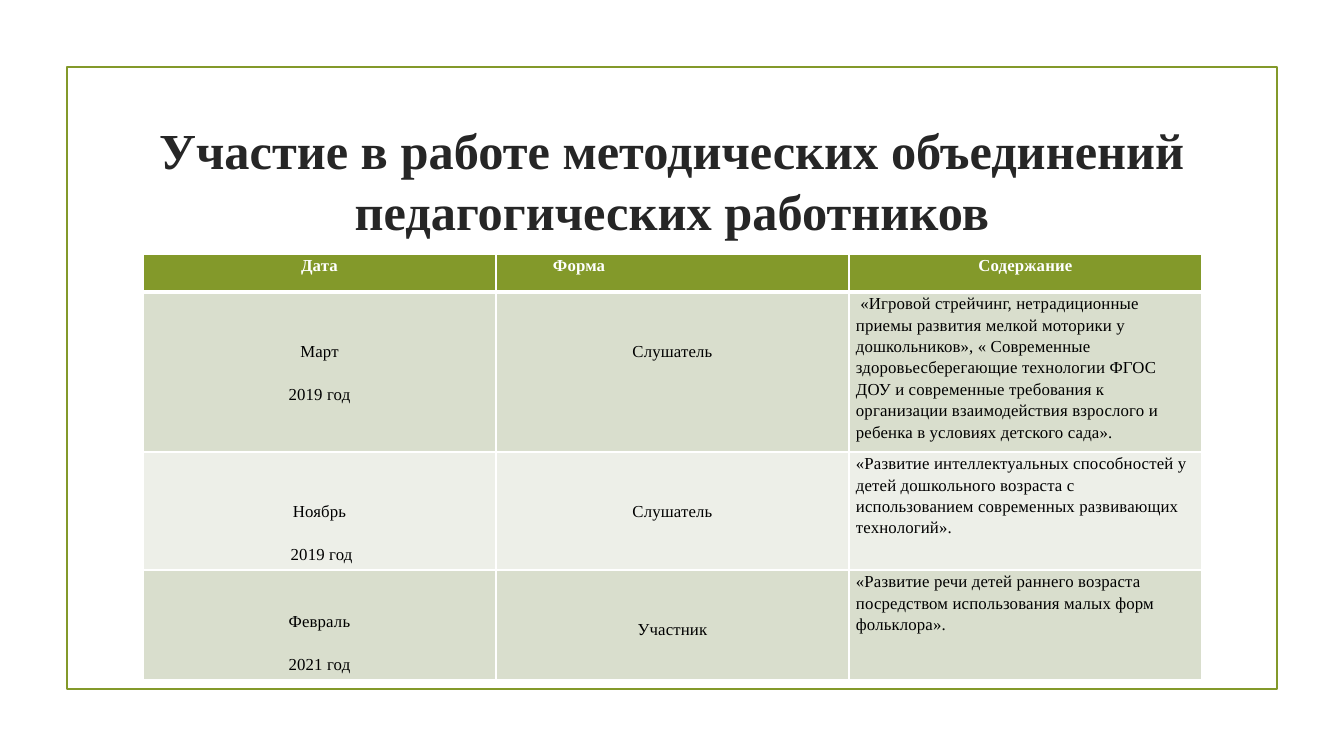
import pptx
import pptx.dml.color
import pptx.enum.shapes
import pptx.enum.text
import pptx.oxml.ns
import pptx.util
from lxml import etree

RGBColor = pptx.dml.color.RGBColor
ALIGN = pptx.enum.text.PP_ALIGN
ANCHOR = pptx.enum.text.MSO_ANCHOR
OLIVE = RGBColor(0x83, 0x99, 0x2A)
DARK = RGBColor(0x26, 0x26, 0x26)
BLACK = RGBColor(0x00, 0x00, 0x00)
WHITE = RGBColor(0xFF, 0xFF, 0xFF)
BAND_DARK = RGBColor(0xD9, 0xDE, 0xCD)
BAND_LIGHT = RGBColor(0xED, 0xEF, 0xE8)
FONT = "Times New Roman"
EMU_PER_PX = 914400 / 100.8


def px(length):
    return pptx.util.Emu(round(length * EMU_PER_PX))


def apply_format(target, values):
    for name, value in values.items():
        setattr(target, name, value)


presentation = pptx.Presentation()
apply_format(presentation, {"slide_width": px(1344), "slide_height": px(756)})
slide = presentation.slides.add_slide(presentation.slide_layouts[5])

# Frame
frame = slide.shapes.add_shape(
    pptx.enum.shapes.MSO_SHAPE.RECTANGLE, px(67), px(67), px(1210), px(622))
frame.shadow.inherit = False
frame.fill.background()
frame.line.color.rgb = OLIVE
frame.line.width = pptx.util.Pt(1.25)

# Title
title = slide.shapes.title
apply_format(title, {"left": px(143), "top": px(108), "width": px(1058), "height": px(144)})
apply_format(title.text_frame, {
    "text": "Участие в работе методических объединений педагогических работников",
    "word_wrap": True, "auto_size": pptx.enum.text.MSO_AUTO_SIZE.NONE,
    "vertical_anchor": ANCHOR.MIDDLE})
paragraph = title.text_frame.paragraphs[0]
paragraph.alignment = ALIGN.CENTER
apply_format(paragraph.font, {"name": FONT, "size": pptx.util.Pt(36), "bold": True})
paragraph.font.color.rgb = DARK

# Table content: cell paragraphs are separated by line breaks
ROWS = [
    ("Дата", "Форма", "Содержание"),
    ("Март\n2019 год", "Слушатель",
     " «Игровой стрейчинг, нетрадиционные приемы развития мелкой моторики у "
     "дошкольников», « Современные здоровьесберегающие технологии ФГОС ДОУ и "
     "современные требования к организации взаимодействия взрослого и ребенка "
     "в условиях детского сада»."),
    ("Ноябрь\n 2019 год", "Слушатель",
     "«Развитие интеллектуальных способностей у детей дошкольного возраста с "
     "использованием современных развивающих технологий»."),
    ("Февраль\n2021 год", "Участник",
     "«Развитие речи детей раннего возраста посредством использования малых "
     "форм фольклора»."),
]
ROW_HEIGHTS = [38, 160, 118, 110]
ROW_FILLS = [OLIVE, BAND_DARK, BAND_LIGHT, BAND_DARK]
DATE_TOPS = [0, 48, 48, 40]
FORM_TOPS = [0, 48, 48, 48]

table = slide.shapes.add_table(
    4, 3, px(143), px(254), px(1059), px(sum(ROW_HEIGHTS))).table
for row, height in zip(table.rows, ROW_HEIGHTS):
    row.height = px(height)

for row_index, texts in enumerate(ROWS):
    header = row_index == 0
    tops = (DATE_TOPS[row_index], FORM_TOPS[row_index], 0)
    for column_index, text in enumerate(texts):
        cell = table.cell(row_index, column_index)
        left_aligned = column_index == (1 if header else 2)
        apply_format(cell, {
            "text": text, "vertical_anchor": ANCHOR.TOP,
            "margin_left": px(57 if header and left_aligned else 7),
            "margin_right": px(7), "margin_top": px(tops[column_index]),
            "margin_bottom": 0})

        # Borders: a thicker line under and above the header boundary
        for side in ("L", "R", "T", "B"):
            thick = (row_index, side) in ((0, "B"), (1, "T"))
            border = etree.SubElement(
                cell._tc.get_or_add_tcPr(), pptx.oxml.ns.qn(f"a:ln{side}"),
                w=str(pptx.util.Pt(3 if thick else 1)))
            border_fill = etree.SubElement(border, pptx.oxml.ns.qn("a:solidFill"))
            etree.SubElement(border_fill, pptx.oxml.ns.qn("a:srgbClr"), val=str(WHITE))
        cell.fill.solid()
        cell.fill.fore_color.rgb = ROW_FILLS[row_index]

        # Text, with slightly widened letter spacing
        for paragraph_index, paragraph in enumerate(cell.text_frame.paragraphs):
            apply_format(paragraph, {
                "alignment": ALIGN.LEFT if left_aligned else ALIGN.CENTER,
                "line_spacing": 1.15,
                "space_before": pptx.util.Pt(15 if paragraph_index else 0)})
            run = paragraph.runs[0]
            apply_format(run.font, {"name": FONT, "size": pptx.util.Pt(12), "bold": header})
            run.font.color.rgb = WHITE if header else BLACK
            run._r.get_or_add_rPr().set("spc", "10")

presentation.save("out.pptx")
